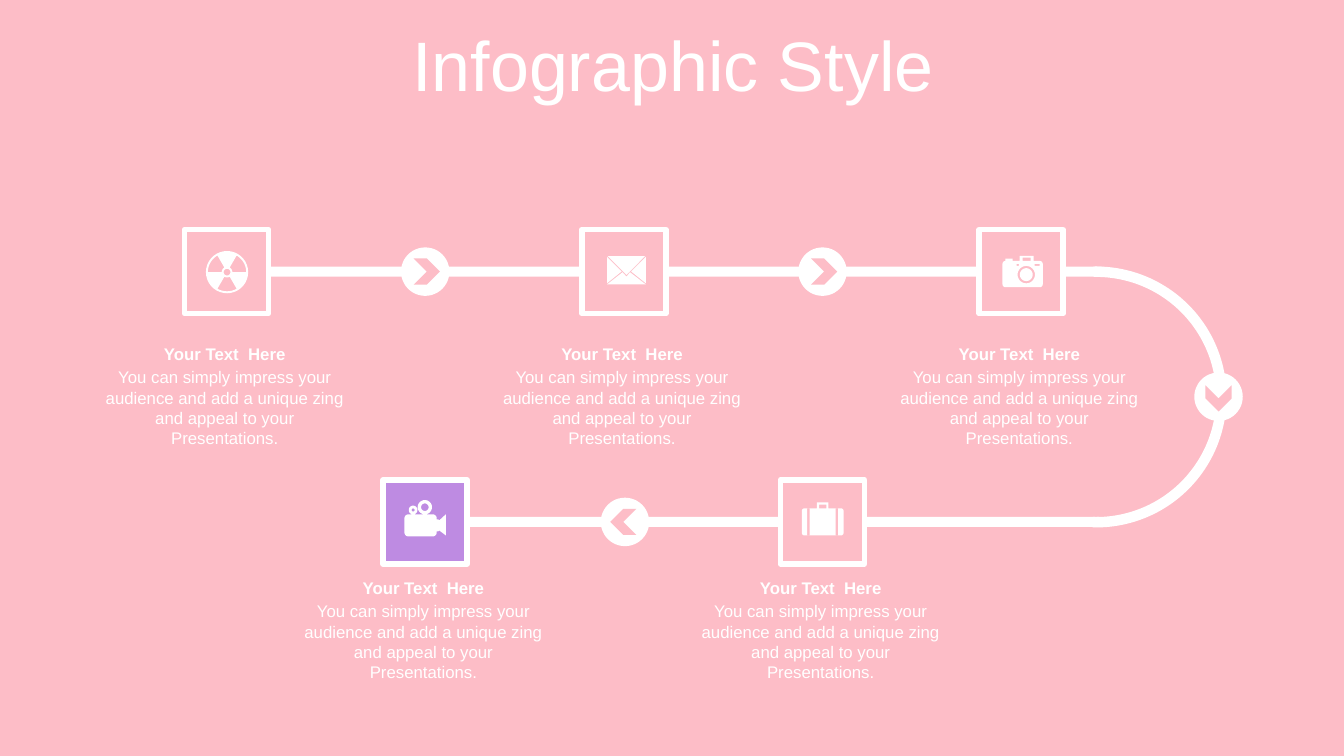
from dataclasses import dataclass
from math import cos, radians, sin

from pptx import Presentation
from pptx.dml.color import RGBColor
from pptx.enum.shapes import MSO_SHAPE
from pptx.enum.text import MSO_ANCHOR, MSO_AUTO_SIZE, PP_ALIGN
from pptx.util import Pt

RECT, OVAL = MSO_SHAPE.RECTANGLE, MSO_SHAPE.OVAL
CHEVRON, ARC = MSO_SHAPE.CHEVRON, MSO_SHAPE.BLOCK_ARC
CENTER, MIDDLE = PP_ALIGN.CENTER, MSO_ANCHOR.MIDDLE
FIT = MSO_AUTO_SIZE.SHAPE_TO_FIT_TEXT

COLORS = {"pink": "FDBDC7", "white": "FFFFFF", "purple": "BE8BE2"}
FONT = "Arial"
HEAD = "Your Text  Here"
BODY = ("You can simply impress your audience and add a unique zing "
        "and appeal to your Presentations.")

PITCH = 283.8       # between neighbours in a row
TOP, LOW = 194, 372.8   # centre lines of the two rows
FIRST, SECOND = 161.8, 303.7    # first tile centre in each row
TILE, DISC, BAR = 60, 34.6, 7.2
BEND = 870.4        # centre of the badge on the curve

Point = tuple[float, float]
Outline = list[Point]


def ring(x: float, y: float, r: float) -> Outline:
    """Circle outline around x, y."""
    return [(x + r * cos(radians(a)), y + r * sin(radians(a)))
            for a in range(0, 360, 10)]


def blade(x: float, y: float, near: float, far: float, start: int) -> Outline:
    """Sixty-degree sector between two radii."""
    turn = range(start, start + 61, 6)
    outer = [(x + far * cos(radians(a)), y + far * sin(radians(a))) for a in turn]
    inner = [(x + near * cos(radians(a)), y + near * sin(radians(a))) for a in turn]
    return outer + inner[::-1]


def box(x: float, y: float, w: float, h: float, r: float = 0) -> Outline:
    """Rectangle outline with optional round corners."""
    if not r:
        return [(x, y), (x + w, y), (x + w, y + h), (x, y + h)]
    hubs = [(x + w - r, y + h - r), (x + r, y + h - r),
            (x + r, y + r), (x + w - r, y + r)]
    return [(cx + r * cos(radians(a)), cy + r * sin(radians(a)))
            for i, (cx, cy) in enumerate(hubs)
            for a in range(90 * i, 90 * i + 91, 15)]


# Outlines are relative to the tile centre; nested ones cut holes.
HAZARD = [ring(0.4, 0.4, 15.1), ring(0.4, 0.4, 2.4),
          *(blade(0.4, 0.4, 3.8, 13.7, a) for a in (60, 180, 300))]
LETTER = [
    [(4.5, 0.5), (15.7, 9.2), (-12, 9.2), (-0.9, 0.5), (1.9, 3.6)],
    [(15.7, -10.4), (15.7, 8.4), (5.3, 0)],
    [(-12, -10.4), (-12, 8.4), (-1.6, 0)],
    [(-11.6, -11.1), (15.3, -11.1), (1.9, 2.4)],
]
CAMERA = [
    box(-13.3, -7.6, 28.8, 18.8, 2.2),
    ring(3.7, 2.2, 6.2), ring(3.7, 2.2, 4.6),
    box(-3.2, -5.4, 1.6, 1.4), box(9.7, -5.4, 3.6, 1.4),
    box(-1.1, -11.2, 10.1, 3.6), box(1.1, -10, 5.8, 2.4),
    box(-11.2, -9.2, 5.2, 1.6),
]
VIDEO = [
    box(-14.8, -5.4, 23.1, 15.8, 2.9),
    ring(-0.2, -10.5, 5.1), ring(-0.2, -10.5, 2.7),
    ring(-8.6, -8.5, 3.1), ring(-8.6, -8.5, 1.1),
    [(8.3, -1.8), (9.4, -1.8), (10.1, -1.1), (14.8, -5.4),
     (14.8, 9.7), (10.1, 6.1), (9.4, 6.8), (8.3, 6.8)],
]
CASE = [
    box(-14.8, -9.7, 29.9, 19.4, 2),
    box(-11, -9.7, 1.8, 19.4), box(9.3, -9.7, 1.8, 19.4),
    box(-4, -14, 8.3, 4.3), box(-2.4, -12.4, 5.1, 2.7),
]


@dataclass
class Step:
    x: float
    y: float
    drop: float     # from the row's centre line to the heading
    icon: list[Outline]
    fill: str = "pink"


@dataclass
class Badge:
    x: float
    y: float
    turn: int


STEPS = [
    Step(FIRST, TOP, 47.9, HAZARD),
    Step(FIRST + PITCH, TOP, 47.9, LETTER),
    Step(FIRST + 2 * PITCH, TOP, 47.9, CAMERA),
    Step(SECOND, LOW, 36.2, VIDEO, "purple"),
    Step(SECOND + PITCH, LOW, 36.2, CASE),
]
BADGES = [
    Badge(SECOND, TOP, 0),
    Badge(SECOND + PITCH, TOP, 0),
    Badge(BEND, (TOP + LOW) / 2, 90),
    Badge(446.4, LOW, 180),
]


def color(name: str) -> RGBColor:
    return RGBColor.from_string(COLORS[name])


def paint(shape, fill: str) -> None:
    shape.shadow.inherit = False
    shape.fill.solid()
    shape.fill.fore_color.rgb = color(fill)
    shape.line.fill.background()


def place(slide, kind, x: float, y: float, w: float, h: float, fill: str):
    """Add a plain filled shape by its top left corner."""
    shape = slide.shapes.add_shape(kind, Pt(x), Pt(y), Pt(w), Pt(h))
    paint(shape, fill)
    return shape


def write(slide, text: str, x: float, y: float, w: float, h: float,
          size: float, bold: bool = False):
    """Add a centred white text box."""
    label = slide.shapes.add_textbox(Pt(x), Pt(y), Pt(w), Pt(h))
    frame = label.text_frame
    frame.word_wrap = True
    para = frame.paragraphs[0]
    para.alignment = CENTER
    run = para.add_run()
    run.text = text
    run.font.name, run.font.size, run.font.bold = FONT, Pt(size), bold
    run.font.color.rgb = color("white")
    return frame


def trace(slide, icon: list[Outline], x: float, y: float) -> None:
    """Draw all outlines of an icon as one freeform around x, y."""
    paths = [[(Pt(px), Pt(py)) for px, py in line] for line in icon]
    pen = slide.shapes.build_freeform(*paths[0][0], scale=1.0)
    pen.add_line_segments(paths[0][1:], close=True)
    for line in paths[1:]:
        pen.move_to(*line[0])
        pen.add_line_segments(line[1:], close=True)
    paint(pen.convert_to_shape(Pt(x), Pt(y)), "white")


def draw_track(slide) -> None:
    arc = place(slide, ARC, 689.8, 190.4, 186.4, 186.4, "white")
    for i, value in enumerate((161.274, 54.902, 0.04)):
        arc.adjustments[i] = value
    for left, right, y in ((191.5, 787, TOP), (334, 785, LOW)):
        place(slide, RECT, left, y - BAR / 2, right - left, BAR, "white")


def draw_step(slide, step: Step) -> None:
    tile = place(slide, RECT, step.x - TILE / 2, step.y - TILE / 2,
                 TILE, TILE, step.fill)
    tile.line.color.rgb = color("white")
    tile.line.width = Pt(4)
    trace(slide, step.icon, step.x, step.y)
    left, top = step.x - 94.8, step.y + step.drop
    for text, y, high, bold in ((BODY, top + 16.8, 65.5, False),
                                (HEAD, top, 21.6, True)):
        write(slide, text, left, y, 187.2, high, 12, bold).auto_size = FIT


def draw_badge(slide, badge: Badge) -> None:
    place(slide, OVAL, badge.x - DISC / 2, badge.y - DISC / 2, DISC, DISC, "white")
    size, nudge = 18.7, 1.2
    x = badge.x + nudge * cos(radians(badge.turn))
    y = badge.y + nudge * sin(radians(badge.turn))
    mark = place(slide, CHEVRON, x - size / 2, y - size / 2, size, size, "pink")
    mark.rotation = badge.turn


def main() -> None:
    deck = Presentation()
    deck.slide_width, deck.slide_height = Pt(960), Pt(540)
    slide = deck.slides.add_slide(deck.slide_layouts[6])
    slide.background.fill.solid()
    slide.background.fill.fore_color.rgb = color("pink")
    title = write(slide, "Infographic Style", 25.2, 22.3, 911.5, 56.9, 50)
    title.vertical_anchor = MIDDLE
    title.paragraphs[0].line_spacing = 0.8
    title.paragraphs[0].space_before = Pt(10)
    draw_track(slide)
    for step in STEPS:
        draw_step(slide, step)
    for badge in BADGES:
        draw_badge(slide, badge)
    deck.save("out.pptx")


if __name__ == "__main__":
    main()
